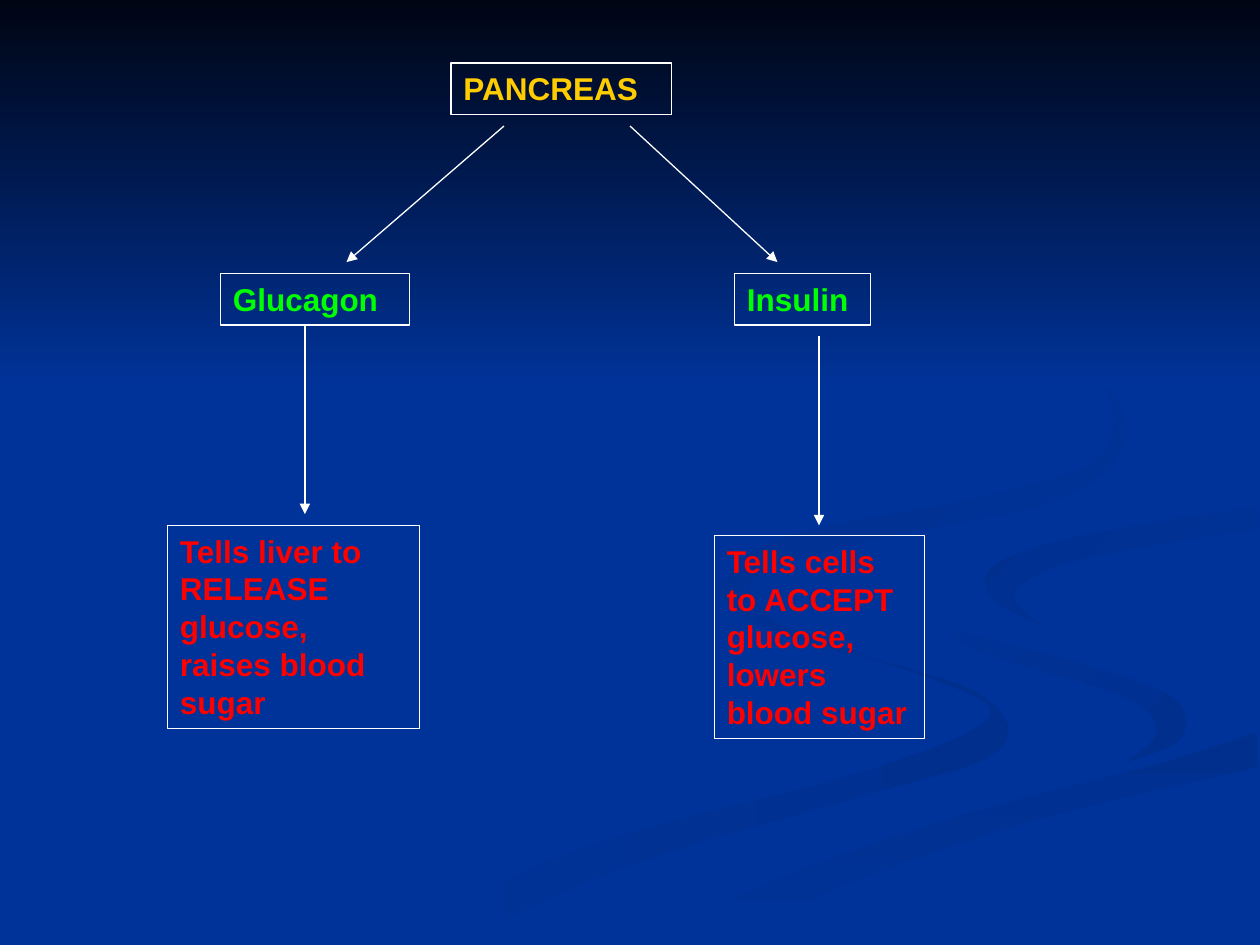
from lxml import etree
from pptx import Presentation
from pptx import util as u
from pptx.dml.color import RGBColor
from pptx.enum import shapes, text
from pptx.oxml.ns import qn

COLORS = {"background": "003399", "night": "000514", "shade": "002F8E",
          "line": "FFFFFF", "organ": "FFCC00", "hormone": "00FF00",
          "effect": "FF0000"}
FONT = {"name": "Arial", "size": u.Pt(18), "bold": True}

# Boxes: text, colour, left, top, width, height (inches)
BOXES = [
    ("PANCREAS", "organ", 3.58, 0.5, 1.75, 0.41),
    ("Glucagon", "hormone", 1.75, 2.17, 1.5, 0.41),
    ("Insulin", "hormone", 5.83, 2.17, 1.08, 0.41),
    ("Tells liver to RELEASE glucose, raises blood sugar", "effect",
     1.33, 4.17, 2, 1.61),
    ("Tells cells to ACCEPT glucose, lowers blood sugar", "effect",
     5.67, 4.25, 1.67, 1.61),
]

# Arrows: start x, start y, end x, end y (inches)
ARROWS = [(4, 1, 2.75, 2.08), (5, 1, 6.17, 2.08),
          (2.42, 2.58, 2.42, 4.08), (6.5, 2.67, 6.5, 4.17)]

# Ribbons: first colour, last colour, clockwise angle, two edges (inches)
RIBBONS = [
    ("background", "shade", 0,
     [(5.75, 4.59), (5.94, 4.85), (6.82, 5.19), (7.81, 5.53), (7.91, 5.97),
      (6.76, 6.34), (4.99, 6.87), (3.61, 7.49)],
     [(3, 7.49), (4.58, 6.74), (6.84, 6.13), (7.85, 5.7), (7.41, 5.39),
      (6.11, 4.99), (5.7, 4.7), (5.75, 4.59)]),
    ("background", "shade", 45,
     [(7.24, 4.64), (7.58, 4.98), (8.5, 5.24), (9.3, 5.53), (9.37, 5.86),
      (8.94, 6.05)],
     [(8.94, 6.05), (9.18, 5.81), (8.92, 5.53), (7.66, 5.12), (7.24, 4.64)]),
    ("shade", "background", 90,
     [(5.03, 7.49), (6.3, 6.93), (7.64, 6.47), (9.2, 6.06), (9.98, 5.81)],
     [(9.98, 6.09), (8.21, 6.51), (6.7, 7.02), (5.71, 7.49)]),
    ("shade", "background", 45,
     [(9.98, 4.02), (8.65, 4.24), (7.91, 4.47), (7.86, 4.74), (8.26, 4.96)],
     [(8.26, 4.96), (8.05, 4.72), (8.43, 4.48), (9.36, 4.29), (9.98, 4.2)]),
    ("shade", "background", 45,
     [(7.62, 2.33), (8.54, 2.83), (8.94, 3.44), (8.41, 3.96), (6.83, 4.3),
      (5.96, 4.61), (6.22, 5)],
     [(6.22, 5), (5.77, 4.62), (6.25, 4.26), (7.91, 3.92), (8.76, 3.6),
      (8.7, 2.99), (7.62, 2.33)]),
]


def rgb(name):
    return RGBColor.from_string(COLORS[name])


def style_line(line):
    line.color.rgb = rgb("line")
    line.width = u.Pt(0.75)


def smooth(edge, steps=6):
    """Catmull-Rom curve through the points of one edge."""
    padded = [edge[0], *edge, edge[-1]]
    curve = []
    for a, b, c, d in zip(padded, padded[1:], padded[2:], padded[3:]):
        for t in (step / steps for step in range(steps)):
            curve.append(tuple(
                u.Inches(q + t / 2 * (r - p + t * (2 * p - 5 * q + 4 * r - s
                                      + t * (3 * (q - r) + s - p))))
                for p, q, r, s in zip(a, b, c, d)))
    return curve + [tuple(map(u.Inches, edge[-1]))]


def fill_gradient(shape, first, last, angle):
    shape.shadow.inherit = False
    shape.line.fill.background()
    shape.fill.gradient()
    shape.fill.gradient_angle = -angle % 360
    for stop, color in zip(shape.fill.gradient_stops, (first, last)):
        stop.color.rgb = rgb(color)


def add_ribbon(slide, first, last, angle, outward, back):
    points = smooth(outward) + smooth(back)
    builder = slide.shapes.build_freeform(*points[0])
    builder.add_line_segments(points[1:], close=True)
    fill_gradient(builder.convert_to_shape(), first, last, angle)


def add_rectangle(slide, *place):
    return slide.shapes.add_shape(shapes.MSO_SHAPE.RECTANGLE,
                                  *map(u.Inches, place))


def add_box(slide, words, color, *place):
    shape = add_rectangle(slide, *place)
    shape.shadow.inherit = False
    shape.fill.background()
    style_line(shape.line)
    frame = shape.text_frame
    frame.word_wrap = True
    frame.vertical_anchor = text.MSO_ANCHOR.TOP
    paragraph = frame.paragraphs[0]
    paragraph.alignment = text.PP_ALIGN.LEFT
    run = paragraph.add_run()
    run.text = words
    for name, value in FONT.items():
        setattr(run.font, name, value)
    run.font.color.rgb = rgb(color)


def add_arrow(slide, *ends):
    arrow = slide.shapes.add_connector(shapes.MSO_CONNECTOR.STRAIGHT,
                                       *map(u.Inches, ends))
    style_line(arrow.line)
    properties = arrow._element.spPr
    etree.SubElement(properties.find(qn("a:ln")), qn("a:tailEnd"),
                     type="triangle")
    etree.SubElement(properties, qn("a:effectLst"))


def main():
    presentation = Presentation()
    presentation.slide_width = u.Inches(10)
    presentation.slide_height = u.Inches(7.5)
    slide = presentation.slides.add_slide(presentation.slide_layouts[6])

    # Background
    slide.background.fill.solid()
    slide.background.fill.fore_color.rgb = rgb("background")
    for ribbon in RIBBONS:
        add_ribbon(slide, *ribbon)
    fill_gradient(add_rectangle(slide, 0, 0, 10, 3.08),
                  "night", "background", 90)

    # Diagram
    for box in BOXES:
        add_box(slide, *box)
    for arrow in ARROWS:
        add_arrow(slide, *arrow)

    presentation.save("out.pptx")


if __name__ == "__main__":
    main()
